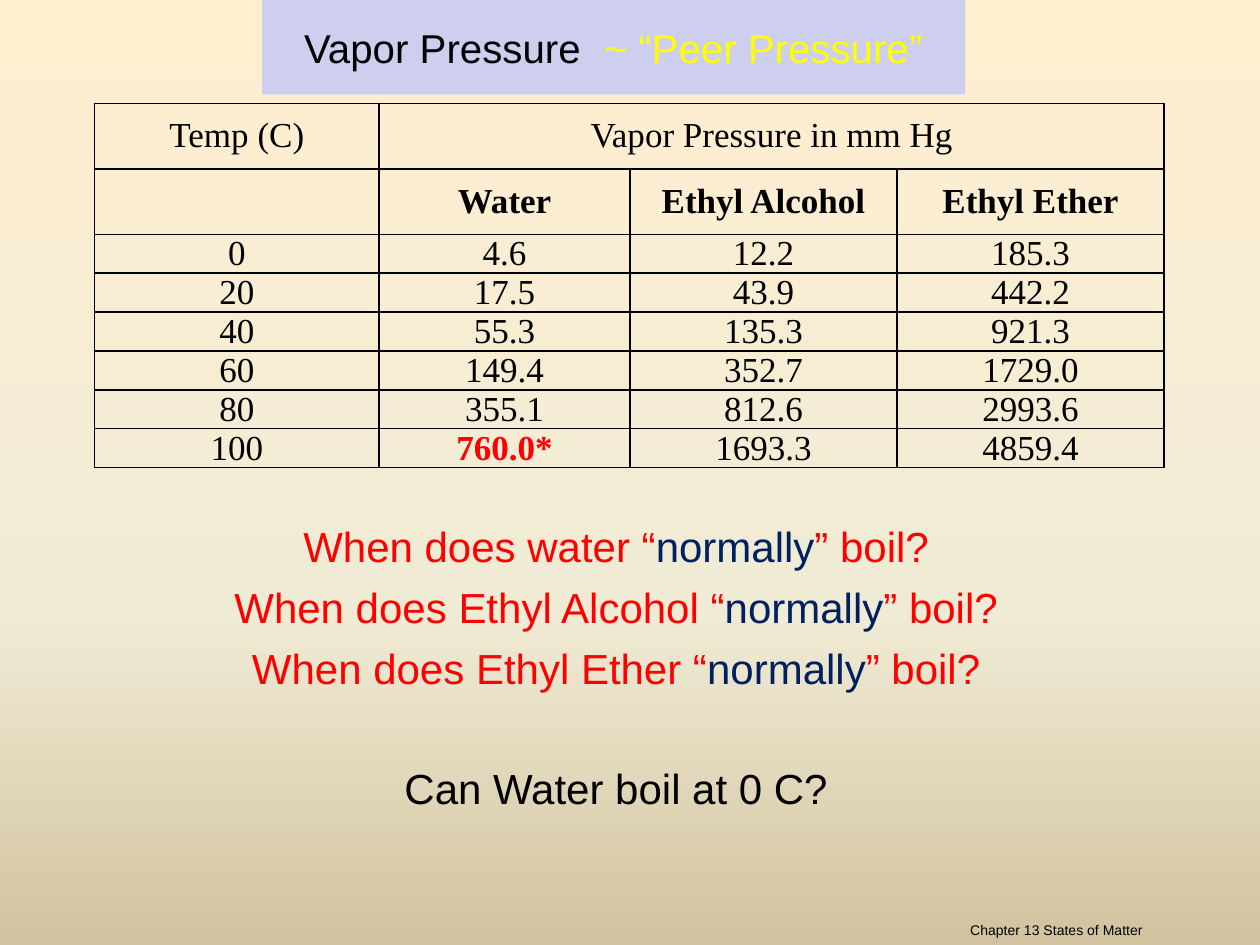
from pptx import Presentation
from pptx.dml.color import RGBColor as RGB
from pptx.enum.text import MSO_ANCHOR as ANC, MSO_AUTO_SIZE as AUTO, PP_ALIGN as AL
from pptx.oxml.ns import qn
from pptx.util import Inches, Pt
from lxml.etree import SubElement

C = {"black": "000000", "red": "FF0000", "navy": "002060", "yellow": "FFFF00",
     "banner": "CECEEF", "top": "FFEFD1", "middle": "F0EBD5", "bottom": "D1C39F"}
COLS = [2.26, 1.99, 2.12, 2.12]
ROWS = [0.52] * 2 + [0.26] * 6
DATA = [
    ["Temp (C)", "Vapor Pressure in mm Hg", "", ""],
    ["", "Water", "Ethyl Alcohol", "Ethyl Ether"],
    ["0", "4.6", "12.2", "185.3"],
    ["20", "17.5", "43.9", "442.2"],
    ["40", "55.3", "135.3", "921.3"],
    ["60", "149.4", "352.7", "1729.0"],
    ["80", "355.1", "812.6", "2993.6"],
    ["100", "760.0*", "1693.3", "4859.4"],
]


def assign(obj, values):
    for name, value in values.items():
        setattr(obj, name, value)


def place(sp, box):
    assign(sp, dict(zip(("left", "top", "width", "height"), map(Inches, box))))


def frame(sp, anchor, right=0.1):
    tf = sp.text_frame
    assign(tf, {"word_wrap": True, "auto_size": AUTO.NONE, "vertical_anchor": anchor,
                "margin_left": Inches(0.1), "margin_right": Inches(right),
                "margin_top": Inches(0.05), "margin_bottom": Inches(0.05)})
    return tf


def add_run(p, text, size, color, name="Arial", bold=False):
    r = p.add_run()
    r.text = text
    assign(r.font, {"size": Pt(size), "name": name, "bold": bold})
    r.font.color.rgb = RGB.from_string(C[color])
    return r


def paint_background(s):
    s.background.fill.gradient()
    grad = s.element.find(".//" + qn("a:gradFill"))
    stops = grad.find(qn("a:gsLst"))
    for stop in list(stops):
        stops.remove(stop)
    for pos, key in ((0, "top"), (65, "middle"), (100, "bottom")):
        stop = SubElement(stops, qn("a:gs"), pos=str(pos * 1000))
        SubElement(stop, qn("a:srgbClr"), val=C[key])
    grad.find(qn("a:lin")).set("ang", "5400000")


def add_title(s, box):
    sp = s.shapes.title
    place(sp, box)
    sp.fill.solid()
    sp.fill.fore_color.rgb = RGB.from_string(C["banner"])
    p = frame(sp, ANC.MIDDLE).paragraphs[0]
    p.alignment = AL.CENTER
    add_run(p, "Vapor Pressure", 23, "black")
    gap = add_run(p, " ", 23, "black")
    gap.font._element.set("spc", "640")
    add_run(p, "~ “Peer Pressure”", 23, "yellow")


def add_borders(cell):
    pr = cell._tc.get_or_add_tcPr()
    for i, side in enumerate(("a:lnL", "a:lnR", "a:lnT", "a:lnB")):
        ln = pr.makeelement(qn(side), {"w": str(Pt(1))})
        SubElement(SubElement(ln, qn("a:solidFill")), qn("a:srgbClr"), val=C["black"])
        pr.insert(i, ln)


def add_pressures(s, box):
    gf = s.shapes.add_table(len(ROWS), len(COLS), *map(Inches, box))
    table = gf.table
    assign(table, {"first_row": False, "horz_banding": False})
    for col, width in zip(table.columns, COLS):
        col.width = Inches(width)
    for row, height in zip(table.rows, ROWS):
        row.height = Inches(height)
    gf.height = Inches(box[3])
    table.cell(0, 1).merge(table.cell(0, 3))
    for i, values in enumerate(DATA):
        for j, text in enumerate(values):
            cell = table.cell(i, j)
            assign(cell, {"vertical_anchor": ANC.MIDDLE, "margin_top": 0, "margin_bottom": 0,
                          "margin_left": Inches(0.07), "margin_right": Inches(0.07)})
            cell.fill.background()
            add_borders(cell)
            p = cell.text_frame.paragraphs[0]
            p.alignment = AL.CENTER
            if text:
                marked = text.endswith("*")
                add_run(p, text, 20, "red" if marked else "black",
                        "Times New Roman", marked or i == 1)


def add_questions(s, box):
    sp = s.placeholders[1]
    place(sp, box)
    tf = frame(sp, ANC.TOP, 0.29)
    liquids = ["water", "Ethyl Alcohol", "Ethyl Ether"]
    lines = [[(f"When does {liquid} “", "red"), ("normally", "navy"), ("” boil?", "red")]
             for liquid in liquids]
    lines.append([("Can Water boil at 0 C?", "black")])
    for i, (line, before) in enumerate(zip(lines, (0, 6, 6, 40))):
        p = tf.add_paragraph() if i else tf.paragraphs[0]
        pr = p._p.get_or_add_pPr()
        assign(p, {"alignment": AL.CENTER, "space_before": Pt(before)})
        pr.set("marL", "0")
        pr.set("indent", "0")
        SubElement(pr, qn("a:buNone"))
        for text, color in line:
            add_run(p, text, 24, color)


def add_footer(s, box):
    p = frame(s.shapes.add_textbox(*map(Inches, box)), ANC.BOTTOM).paragraphs[0]
    p.alignment = AL.RIGHT
    add_run(p, "Chapter 13 States of Matter", 8, "black")


def main():
    prs = Presentation()
    assign(prs, {"slide_width": Inches(10), "slide_height": Inches(7.5)})
    s = prs.slides.add_slide(prs.slide_layouts[1])
    paint_background(s)
    add_questions(s, (0.11, 4.08, 9.75, 2.46))
    add_footer(s, (4.5, 7.17, 4.67, 0.33))
    add_title(s, (2.08, 0, 5.58, 0.75))
    add_pressures(s, (0.75, 0.82, 8.5, 3.04))
    prs.save("out.pptx")


if __name__ == "__main__":
    main()
